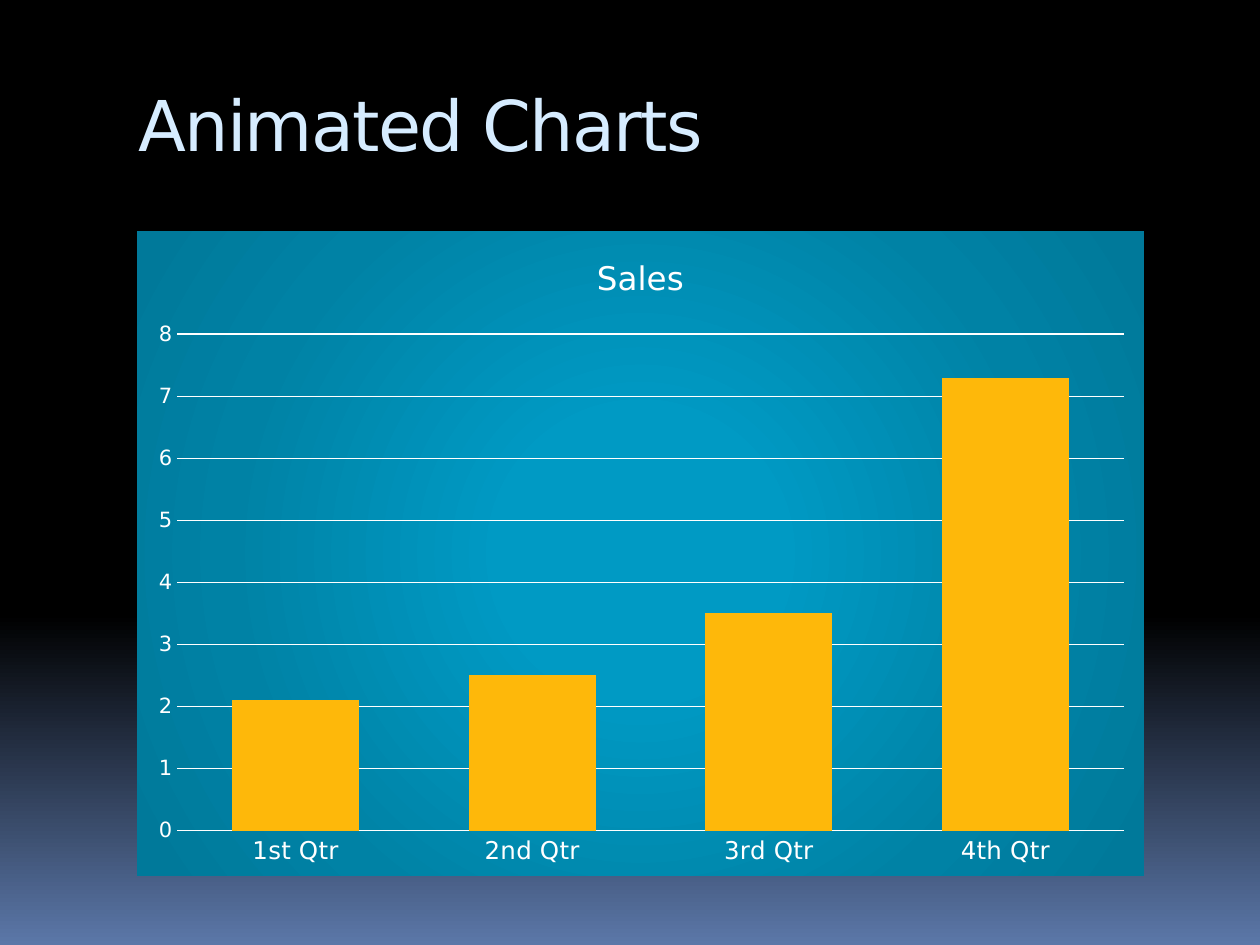
from pptx import Presentation
from pptx.chart.data import CategoryChartData
from pptx.dml.color import RGBColor
from pptx.enum.chart import XL_CHART_TYPE as CT, XL_TICK_MARK as TM
from pptx.enum.text import MSO_ANCHOR, PP_ALIGN
from pptx.oxml import parse_xml
from pptx.oxml.ns import nsdecls, qn
from pptx.util import Pt

PX = 914400 / 126
FONT = "DejaVu Sans"
COLORS = {
    "black": "000000", "dusk": "5B77A8", "title": "D6ECFF", "white": "FFFFFF",
    "bar": "FEB80A", "glow": "009AC4", "teal": "0082A5", "edge": "00799A",
}
SALES = {"1st Qtr": 2.1, "2nd Qtr": 2.5, "3rd Qtr": 3.5, "4th Qtr": 7.3}


def px(*values):
    return [round(v * PX) for v in values]


def rgb(name):
    return RGBColor.from_string(COLORS[name])


def format_font(font, size, color="white"):
    font.name = FONT
    font.size = Pt(size)
    font.bold = False
    font.color.rgb = rgb(color)


def add_text(tf, text, size, color="white", spacing=None, align=None):
    p = tf.paragraphs[0]
    p.alignment = align
    r = p.add_run()
    r.text = text
    format_font(r.font, size, color)
    if spacing is not None:
        r.font._element.set("spc", str(spacing * 100))


def gradient(stops, direction):
    items = "".join(
        f'<a:gs pos="{pos * 1000}"><a:srgbClr val="{COLORS[name]}"/></a:gs>'
        for pos, name in stops
    )
    return parse_xml(
        f'<a:gradFill {nsdecls("a")} rotWithShape="1">'
        f"<a:gsLst>{items}</a:gsLst>{direction}</a:gradFill>"
    )


def set_background(s):
    fill = s.background.fill
    fill.solid()
    bg = s._element.find(".//" + qn("p:bgPr"))
    bg.replace(
        bg.find(qn("a:solidFill")),
        gradient([(0, "black"), (65, "black"), (100, "dusk")],
                 '<a:lin ang="5400000" scaled="0"/>'),
    )


def add_title(s, text):
    sp = s.shapes.title
    sp.left, sp.top, sp.width, sp.height = px(126, 71, 1071, 126)
    tf = sp.text_frame
    tf.vertical_anchor = MSO_ANCHOR.TOP
    tf.margin_top = px(11)[0]
    add_text(tf, text, 40, "title", spacing=-1, align=PP_ALIGN.LEFT)


def format_axis(axis, size):
    axis.major_tick_mark = axis.minor_tick_mark = TM.NONE
    axis.format.line.fill.background()
    format_font(axis.tick_labels.font, size)


def fill_chart(chart):
    sp_pr = parse_xml(f'<c:spPr {nsdecls("c", "a")}><a:ln><a:noFill/></a:ln></c:spPr>')
    sp_pr.insert(0, gradient(
        [(0, "glow"), (23, "glow"), (69, "teal"), (97, "edge")],
        '<a:path path="circle">'
        '<a:fillToRect l="50000" t="50000" r="50000" b="50000"/></a:path>',
    ))
    chart._chartSpace.find(qn("c:chart")).addnext(sp_pr)


def place_plot(chart, x, y, w, h):
    area = chart._chartSpace.find(".//" + qn("c:plotArea"))
    old = area.find(qn("c:layout"))
    if old is not None:
        area.remove(old)
    sizes = "".join(f'<c:{k} val="{v}"/>' for k, v in zip("xywh", (x, y, w, h)))
    area.insert(0, parse_xml(
        f'<c:layout {nsdecls("c")}><c:manualLayout><c:layoutTarget val="inner"/>'
        f'<c:xMode val="edge"/><c:yMode val="edge"/>{sizes}'
        "</c:manualLayout></c:layout>"
    ))


def add_sales_chart(s):
    data = CategoryChartData()
    data.categories = list(SALES)
    data.add_series("Sales", list(SALES.values()))
    chart = s.shapes.add_chart(CT.COLUMN_CLUSTERED, *px(137, 231, 1007, 645), data).chart
    format_font(chart.font, 10)
    chart.has_legend = False
    chart.has_title = True
    add_text(chart.chart_title.text_frame, "Sales", 18.6)
    chart.chart_title.include_in_layout = False

    plot = chart.plots[0]
    plot.gap_width = 86
    plot.vary_by_categories = False
    fill = plot.series[0].format.fill
    fill.solid()
    fill.fore_color.rgb = rgb("bar")

    format_axis(chart.category_axis, 14)
    axis = chart.value_axis
    format_axis(axis, 12)
    axis.minimum_scale, axis.maximum_scale, axis.major_unit = 0, 8, 1
    axis.has_major_gridlines = True
    line = axis.major_gridlines.format.line
    line.color.rgb = rgb("white")
    line.width = Pt(0.75)

    fill_chart(chart)
    place_plot(chart, 0.04, 0.16, 0.94, 0.77)


def main():
    prs = Presentation()
    prs.slide_width, prs.slide_height = px(1260, 945)
    s = prs.slides.add_slide(prs.slide_layouts[5])
    set_background(s)
    add_title(s, "Animated Charts")
    add_sales_chart(s)
    prs.save("out.pptx")


if __name__ == "__main__":
    main()
